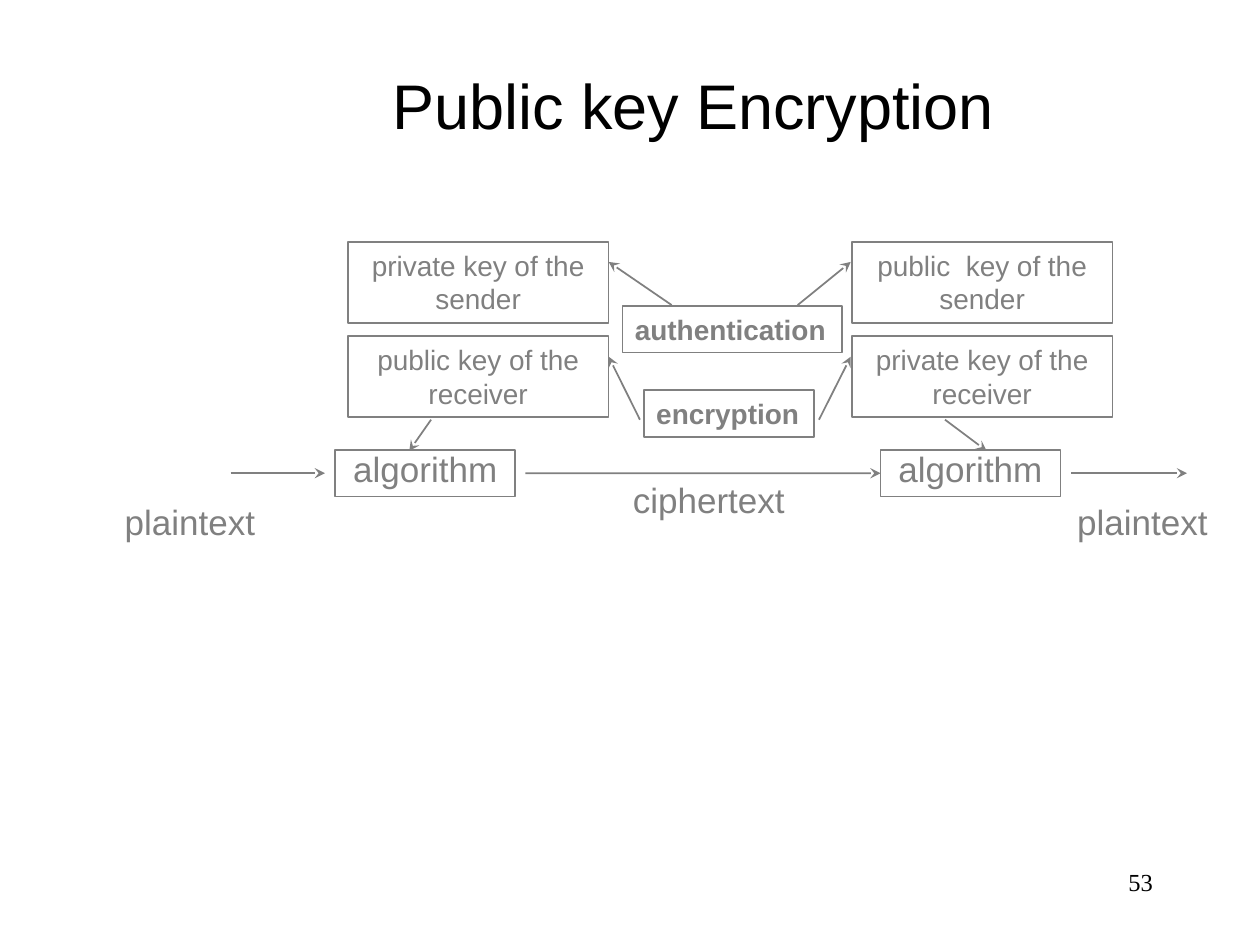
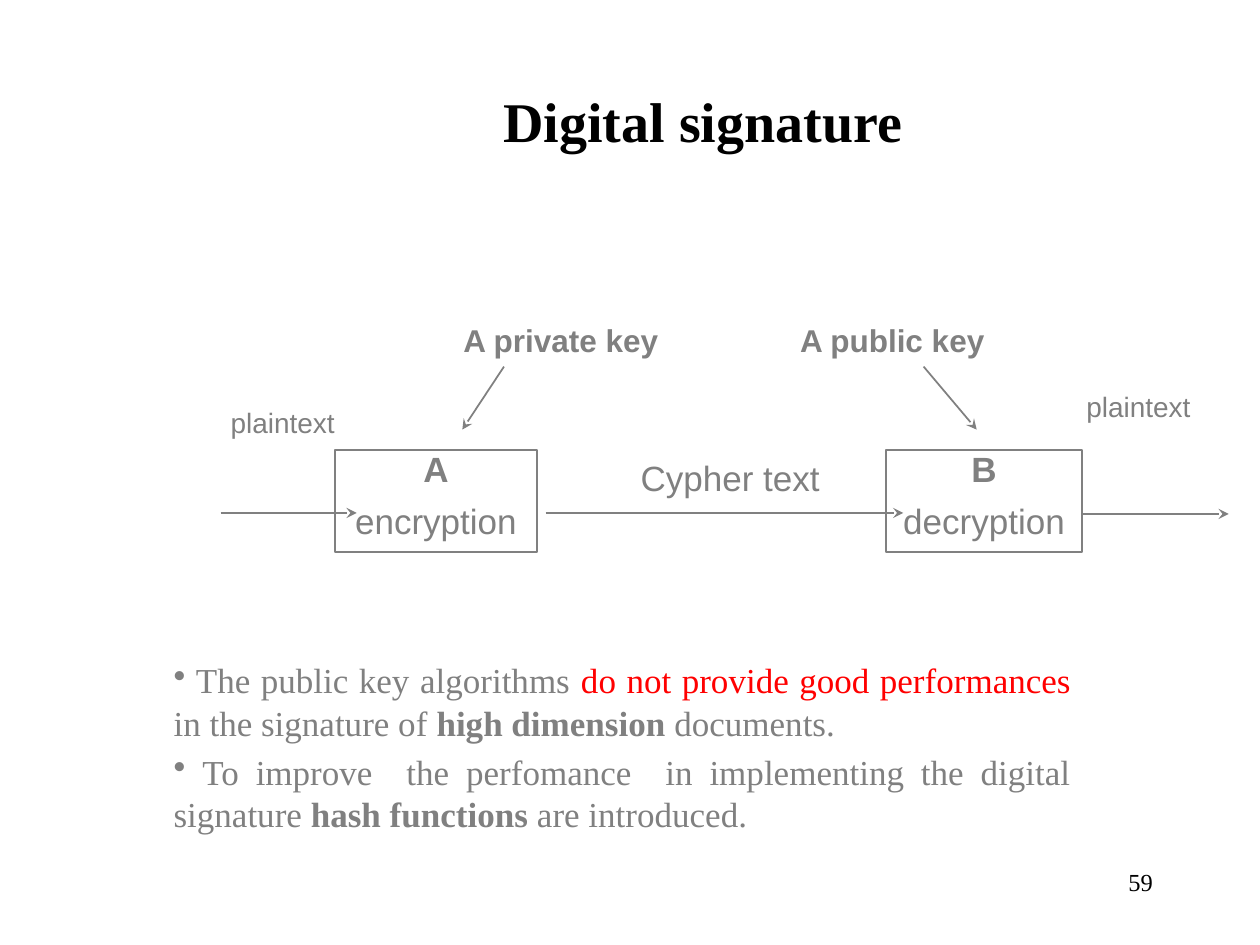
from pptx import Presentation
from pptx.dml.color import RGBColor
from pptx.enum.shapes import MSO_CONNECTOR as Connector, MSO_SHAPE as Preset
from pptx.enum.text import MSO_ANCHOR as Anchor, PP_ALIGN as Align
from pptx.oxml.ns import qn
from pptx.util import Cm, Pt
from lxml.etree import SubElement

COLORS = {"ink": "000000", "gray": "808080", "alert": "FF0000", "paper": "FFFFFF"}
SANS, SERIF = "Arial", "Times New Roman"

TERM = {"size": Pt(20), "name": SANS, "color": "gray", "bold": False}
SMALL = {**TERM, "size": Pt(16)}
SMALL_BOLD = {**SMALL, "bold": True}
TERM_BOLD = {**TERM, "bold": True}
KEY_NAME = {**TERM_BOLD, "size": Pt(18)}
NOTE = {**TERM, "name": SERIF}
NOTE_BOLD = {**NOTE, "bold": True}
NOTE_ALERT = {**NOTE, "color": "alert"}
NUMBER = {"size": Pt(14), "name": SERIF, "color": "ink"}
TITLE = {"size": Pt(36), "name": SANS, "color": "ink"}
TITLE_BOLD = {"size": Pt(32), "name": SERIF, "color": "ink", "bold": True}


def rgb(name):
    return RGBColor.from_string(COLORS[name])


def set_values(target, values):
    for name, value in values.items():
        setattr(target, name, value)


def style_font(font, values):
    for name, value in values.items():
        if name == "color":
            font.color.rgb = rgb(value)
        else:
            setattr(font, name, value)


def write(shape, paragraphs, align=Align.CENTER, anchor=Anchor.TOP, wrap=True, **spacing):
    frame = shape.text_frame
    set_values(frame, {"word_wrap": wrap, "vertical_anchor": anchor})
    gap = spacing.pop("gap", None)
    for index, runs in enumerate(paragraphs):
        paragraph = frame.add_paragraph() if index else frame.paragraphs[0]
        set_values(paragraph, {"alignment": align, **spacing})
        if index and gap:
            paragraph.space_before = gap
        for text, values in runs:
            run = paragraph.add_run()
            run.text = text
            style_font(run.font, values)
    return frame


class Region:
    def __init__(self, slide, left, top):
        self.shapes = slide.shapes
        self.left, self.top = left, top

    def place(self, x, y):
        return Cm(self.left + x), Cm(self.top + y)

    def text(self, x, y, width, height, paragraphs, **layout):
        shape = self.shapes.add_textbox(*self.place(x, y), Cm(width), Cm(height))
        return write(shape, paragraphs, **layout)

    def box(self, x, y, width, height, paragraphs, **layout):
        shape = self.shapes.add_shape(
            Preset.RECTANGLE, *self.place(x, y), Cm(width), Cm(height))
        shape.shadow.inherit = False
        shape.fill.background()
        shape.line.color.rgb = rgb("gray")
        shape.line.width = Pt(1)
        write(shape, paragraphs, **layout)
        return shape

    def arrow(self, start_x, start_y, end_x, end_y):
        connector = self.shapes.add_connector(
            Connector.STRAIGHT, *self.place(start_x, start_y), *self.place(end_x, end_y))
        connector.line.color.rgb = rgb("gray")
        connector.line.width = Pt(1)
        SubElement(connector.line._get_or_add_ln(), qn("a:tailEnd"), type="stealth")
        SubElement(connector._element.spPr, qn("a:effectLst"))
        return connector


def add_slide(presentation, number):
    slide = presentation.slides.add_slide(presentation.slide_layouts[6])
    fill = slide.background.fill
    fill.solid()
    fill.fore_color.rgb = rgb("paper")
    Region(slide, 18.21, 17.35).text(
        0, 0, 5.28, 1.27, [[(number, NUMBER)]], align=Align.RIGHT)
    return slide


def add_title(slide, left, height, text, values):
    Region(slide, left, 0.84).text(
        0, 0, 21.59, height, [[(text, values)]], anchor=Anchor.BOTTOM)


def draw_key_exchange(slide, left, top):
    region = Region(slide, left, top)
    key_boxes = [
        ["private key of the sender", "public  key of the sender"],
        ["public key of the receiver", "private key of the receiver"],
    ]
    for row, names in enumerate(key_boxes):
        for column, name in enumerate(names):
            region.box(5.82 + 10.16 * column, 1.9 * row, 5.26, 1.63, [[(name, SMALL)]])

    for x, y, width, name in [
        (11.36, 1.29, 4.42, "authentication"),
        (11.79, 2.99, 3.43, "encryption"),
    ]:
        region.box(x, y, width, 0.94, [[(name, SMALL_BOLD)]], align=Align.LEFT, wrap=False)

    algorithms = [
        region.box(x, 4.19, 3.63, 0.94, [[("algorithm", TERM)]], line_spacing=0.8)
        for x in (5.57, 16.56)
    ]

    flow = 4.66
    for start, end in [(3.46, 5.36), (20.4, 22.74)]:
        region.arrow(start, flow, end, flow)
    region.arrow(9.4, flow, 16.56, flow).end_connect(algorithms[1], 1)

    for ends in [
        (12.35, 1.27, 11.08, 0.4), (14.89, 1.27, 15.96, 0.4),
        (11.71, 3.58, 11.08, 2.31), (15.32, 3.58, 15.96, 2.31),
        (7.5, 3.58, 7.06, 4.21), (17.86, 3.58, 18.7, 4.21),
    ]:
        region.arrow(*ends)

    for x, y, width, name in [
        (0, 5.08, 5.28, "plaintext"),
        (10.24, 4.64, 5.72, "ciphertext"),
        (18.88, 5.08, 5.92, "plaintext"),
    ]:
        region.text(x, y, width, 1.12, [[(name, TERM)]])


def draw_signature(slide, left, top):
    region = Region(slide, left, top)
    for x, width, party, action in [
        (4.45, 4.06, "A", "encryption"),
        (15.55, 3.96, "B", "decryption"),
    ]:
        region.box(x, 2.72, width, 2.06, [[(party, TERM_BOLD)], [(action, TERM)]],
                   line_spacing=0.8, gap=Pt(10))

    for ends in [
        (7.85, 1.04, 7.01, 2.31), (16.31, 1.04, 17.38, 2.31),
        (2.14, 3.99, 4.88, 3.99), (8.69, 3.99, 15.9, 3.99), (19.48, 4.01, 22.46, 4.01),
    ]:
        region.arrow(*ends)

    for x, name in [(6.78, "A private key"), (13.57, "A public key")]:
        region.text(x, 0, 5.28, 1.02, [[(name, KEY_NAME)]], align=Align.JUSTIFY)
    for x, y, width, name, values in [
        (0, 1.7, 6.78, "plaintext", SMALL),
        (9.55, 2.72, 5.72, "Cypher text", TERM),
        (18.19, 1.37, 4.9, "plaintext", SMALL),
    ]:
        region.text(x, y, width, 1.12, [[(name, values)]])


def add_notes_on_hashing(slide, left, top):
    statements = [
        [(" The public key algorithms ", NOTE),
         ("do not provide good performances ", NOTE_ALERT),
         ("in the signature of ", NOTE),
         ("high dimension ", NOTE_BOLD),
         ("documents.", NOTE)],
        [(" To improve  the perfomance  in implementing the digital signature ", NOTE),
         ("hash functions ", NOTE_BOLD),
         ("are introduced.", NOTE)],
    ]
    frame = Region(slide, left, top).text(
        0, 0, 18.59, 3.7, statements, align=Align.JUSTIFY, gap=Pt(4))
    for paragraph in frame.paragraphs:
        properties = paragraph._p.get_or_add_pPr()
        for name in ("marL", "indent"):
            properties.set(name, "0")
        SubElement(properties, qn("a:buChar"), char="•")


def main():
    presentation = Presentation()
    set_values(presentation, {"slide_width": Cm(25.4), "slide_height": Cm(19.05)})

    slide = add_slide(presentation, "53")
    add_title(slide, 3.18, 2.16, "Public key Encryption", TITLE)
    draw_key_exchange(slide, 1.19, 4.88)

    slide = add_slide(presentation, "59")
    add_title(slide, 3.38, 2.39, "Digital signature", TITLE_BOLD)
    draw_signature(slide, 2.31, 6.35)
    add_notes_on_hashing(slide, 3.25, 13.16)

    presentation.save("out.pptx")


if __name__ == "__main__":
    main()
